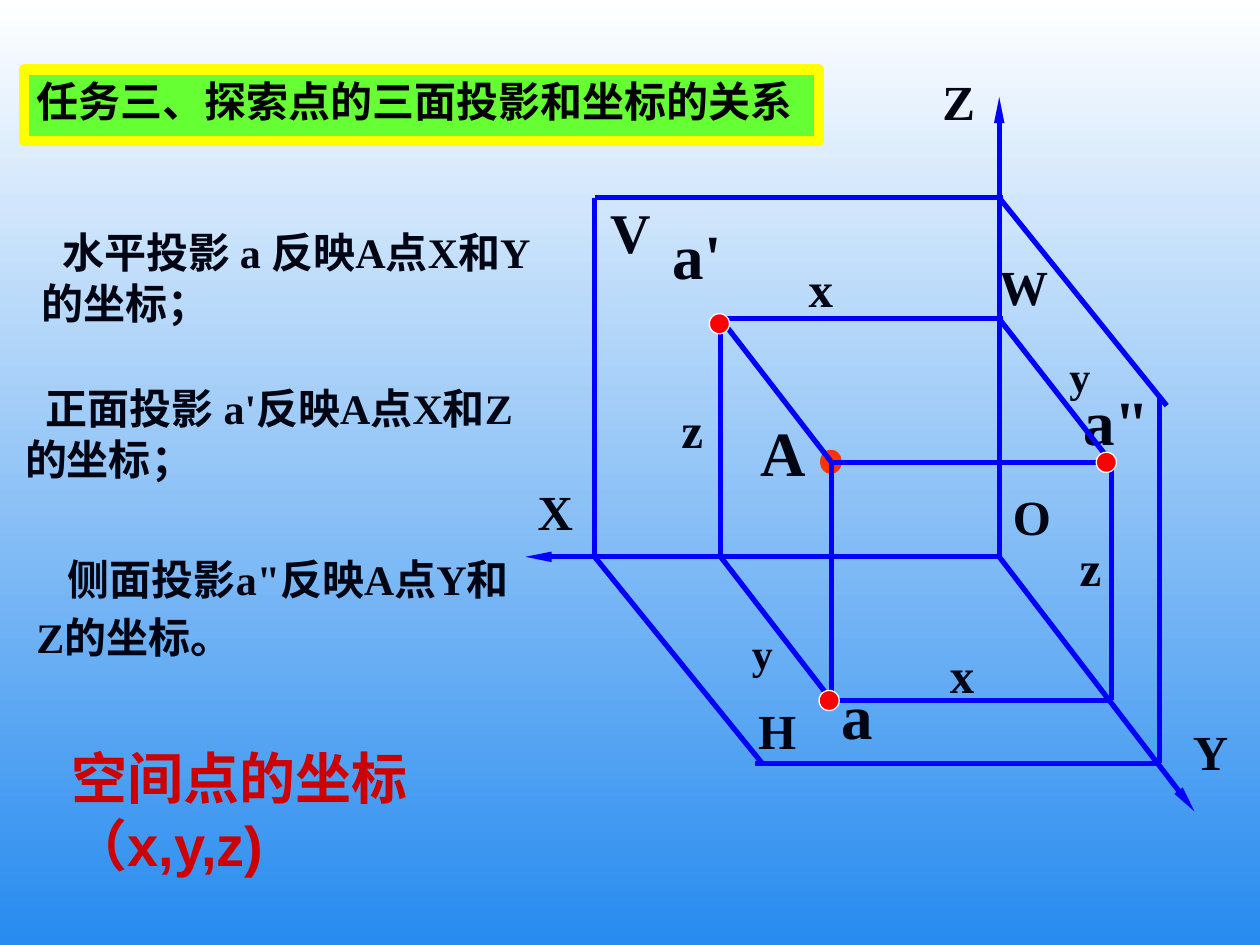
from dataclasses import dataclass

from lxml.etree import SubElement
from pptx import Presentation
from pptx.dml.color import RGBColor
from pptx.enum.shapes import MSO_CONNECTOR, MSO_SHAPE
from pptx.enum.text import MSO_ANCHOR, MSO_AUTO_SIZE, PP_ALIGN
from pptx.oxml.ns import qn
from pptx.util import Pt


@dataclass
class Theme:
    ink: RGBColor = RGBColor.from_string("000514")
    black: RGBColor = RGBColor.from_string("000000")
    line: RGBColor = RGBColor.from_string("0000FF")
    point: RGBColor = RGBColor.from_string("FF0000")
    space_point: RGBColor = RGBColor.from_string("FF3300")
    white: RGBColor = RGBColor.from_string("FFFFFF")
    sky: RGBColor = RGBColor.from_string("278BEF")
    title_fill: RGBColor = RGBColor.from_string("66FF33")
    title_line: RGBColor = RGBColor.from_string("FFFF00")
    result: RGBColor = RGBColor.from_string("CC0000")
    serif: str = "Times New Roman"
    sans: str = "Arial"
    small: int = 24
    medium: int = 28
    large: int = 32
    huge: int = 36


theme = Theme()


def write(frame, text, size, color=theme.ink, font=theme.serif, wrap=True):
    frame.word_wrap = wrap
    paragraph = frame.paragraphs[0]
    paragraph.alignment = PP_ALIGN.LEFT
    run = paragraph.add_run()
    run.text = text
    run.font.name = font
    run.font.size = Pt(size)
    run.font.bold = True
    run.font.color.rgb = color
    return paragraph


def add_dot(x, y, width, height, fill, outline, weight):
    dot = slide.shapes.add_shape(MSO_SHAPE.OVAL, Pt(x - width / 2), Pt(y - height / 2),
                                 Pt(width), Pt(height))
    dot.shadow.inherit = False
    dot.fill.solid()
    dot.fill.fore_color.rgb = fill
    dot.line.color.rgb = outline
    dot.line.width = Pt(weight)


prs = Presentation()
prs.slide_width, prs.slide_height = Pt(720), Pt(540)
slide = prs.slides.add_slide(prs.slide_layouts[5])

# Background
background = slide.background.fill
background.gradient()
background.gradient_angle = 270
for stop, color, position in zip(background.gradient_stops, (theme.white, theme.sky), (0, 1)):
    stop.color.rgb = color
    stop.position = position

# Title
title = slide.shapes.title
title.left, title.top, title.width, title.height = Pt(13.7), Pt(39.6), Pt(454.3), Pt(41)
title.fill.solid()
title.fill.fore_color.rgb = theme.title_fill
title.line.color.rgb = theme.title_line
title.line.width = Pt(6)
title.text_frame.auto_size = MSO_AUTO_SIZE.NONE
title.text_frame.vertical_anchor = MSO_ANCHOR.TOP
write(title.text_frame, "任务三、探索点的三面投影和坐标的关系", theme.small, theme.black)

# Statements about each projection
statements = [
    ("水平投影 a 反映A点X和Y的坐标；", 16.6, 126, 303, 65, 12, 1),
    ("正面投影 a'反映A点X和Z的坐标；", 7.2, 215.3, 309, 65, 12, 1),
    ("侧面投影a\"反映A点Y和Z的坐标。", 13.7, 308.2, 300, 74, 18, 1.15),
]
for text, left, top, width, height, indent, spacing in statements:
    statement = slide.shapes.add_textbox(Pt(left), Pt(top), Pt(width), Pt(height))
    paragraph = write(statement.text_frame, text, theme.small)
    paragraph.line_spacing = spacing
    paragraph._p.get_or_add_pPr().set("indent", str(Pt(indent)))

# Labels of planes, axes, points and coordinates: text, left, top, width, size
labels = [
    ("O", 571.7, 274.3, 36, theme.medium),
    ("A", 427.7, 232.6, 40, theme.huge),
    ("V", 342, 109.4, 37.4, theme.large),
    ("H", 426.2, 396.7, 36, theme.medium),
    ("W", 563.8, 143.3, 42.5, theme.medium),
    ("a'", 377.3, 120.2, 42.5, theme.huge),
    ("a", 473.8, 383, 32.4, theme.huge),
    ("a\"", 612, 215.3, 52.6, theme.huge),
    ("X", 300.2, 271.4, 87.8, theme.medium),
    ("Z", 531.4, 37.4, 54, theme.medium),
    ("Y", 674.6, 409, 45.4, theme.medium),
    ("x", 455, 144, 28.8, theme.medium),
    ("x", 535.7, 365, 28.8, theme.medium),
    ("z", 382.3, 224.6, 23, theme.medium),
    ("z", 609.8, 303.8, 23, theme.medium),
    ("y", 422.6, 355, 28, theme.small),
    ("y", 604, 196.6, 28, theme.small),
]
for text, left, top, width, size in labels:
    label = slide.shapes.add_textbox(Pt(left), Pt(top), Pt(width), Pt(size * 1.2 + 7.2))
    write(label.text_frame, text, size, wrap=len(text) == 1)

# Point A in space, behind its projection lines
add_dot(474.8, 263.9, 6.5, 7.9, theme.space_point, theme.space_point, 6)

# Corners of the projection box
origin = (571, 318.2)
x_foot, z_foot, y_foot = (411.8, 318.2), (571, 182.2), (635, 400.3)
front, side, below, space = (411.8, 182.2), (635, 264.2), (475.2, 400.3), (475.2, 264.2)
x_end, z_end, y_end = (339.8, 318.2), (571, 113), (662.4, 436.3)
edges = [
    # Planes V, H and W
    (x_end, (339.8, 113)), ((339.8, 113), (573, 113)), (x_end, (435.6, 436.3)),
    ((431.3, 436.3), y_end), (y_end, (662.4, 227.5)), ((666.7, 231.8), z_end),
    # Box of point A
    (x_foot, front), (front, (573, 182.2)), (z_foot, side), (side, y_foot),
    (x_foot, below), (below, y_foot), (below, space), (space, side), (front, space),
]
axes = [(origin, (571, 55.4)), (origin, (300.2, 318.2)), (origin, (682.6, 463.7))]
for start, end in edges + axes:
    edge = slide.shapes.add_connector(MSO_CONNECTOR.STRAIGHT, Pt(start[0]), Pt(start[1]),
                                      Pt(end[0]), Pt(end[1]))
    edge.line.color.rgb = theme.line
    edge.line.width = Pt(3)
    if (start, end) in axes:
        SubElement(edge.line._get_or_add_ln(), qn("a:tailEnd"), type="triangle", w="sm", len="lg")
    SubElement(edge._element.spPr, qn("a:effectLst"))

# Projections a', a and a"
for x, y in [(411.1, 185), (473.8, 400.3), (632.2, 264.2)]:
    add_dot(x, y, 11.5, 11.5, theme.point, theme.white, 0.75)

# Coordinates of the point in space
result = slide.shapes.add_textbox(Pt(33.8), Pt(421.2), Pt(316.8), Pt(46))
result.text_frame.margin_right = Pt(72)
write(result.text_frame, "空间点的坐标（x,y,z)", theme.large, theme.result, theme.sans)

prs.save("out.pptx")
